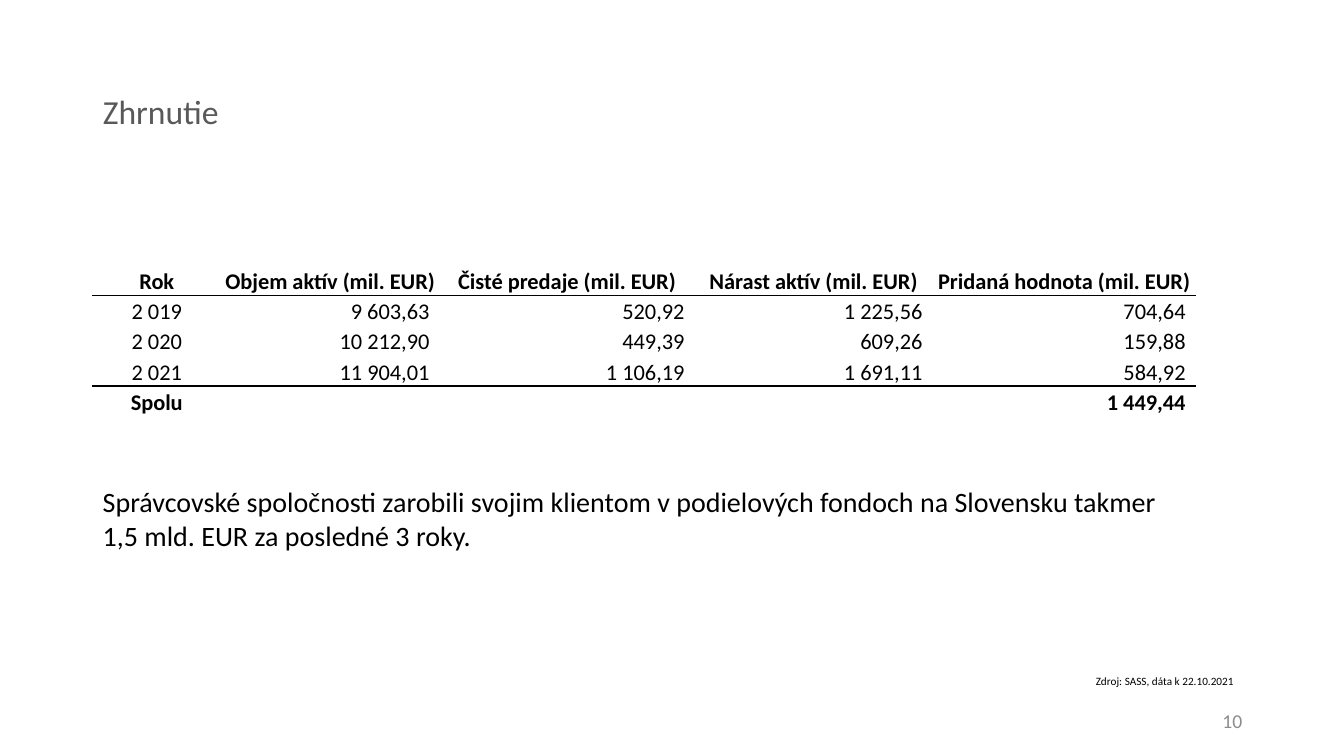
from dataclasses import dataclass

from lxml import etree
from pptx import Presentation
from pptx.dml.color import RGBColor
from pptx.enum.text import MSO_ANCHOR, PP_ALIGN
from pptx.oxml.ns import qn
from pptx.util import Inches, Pt

TOP, MIDDLE, BOTTOM = MSO_ANCHOR.TOP, MSO_ANCHOR.MIDDLE, MSO_ANCHOR.BOTTOM
LEFT, CENTER, RIGHT = PP_ALIGN.LEFT, PP_ALIGN.CENTER, PP_ALIGN.RIGHT
TITLE_ONLY = 5


@dataclass(frozen=True)
class Theme:
    font: str = "Calibri"
    title_color: str = "595959"
    number_color: str = "8C8C8C"
    text_color: str = "000000"
    background: str = "FFFFFF"
    title_size: int = 24
    message_size: int = 20
    table_size: int = 16
    number_size: int = 14
    source_size: int = 8
    rule_width: int = 1


THEME = Theme()

HEADERS = ["Rok", "Objem aktív (mil. EUR)", "Čisté predaje (mil. EUR)",
           "Nárast aktív (mil. EUR)", "Pridaná hodnota (mil. EUR)"]
YEARS = [
    ["2 019", "9 603,63", "520,92", "1 225,56", "704,64"],
    ["2 020", "10 212,90", "449,39", "609,26", "159,88"],
    ["2 021", "11 904,01", "1 106,19", "1 691,11", "584,92"],
]
TOTAL = ["Spolu", "", "", "", "1 449,44"]
COLUMN_WIDTHS = [1.27, 2.17, 2.53, 2.36, 2.61]
HEADER_HEIGHT, ROW_HEIGHT = 0.88, 0.3
NUMBER_INSET = 0.1


def write_text(text_frame, text, *, size, color=THEME.text_color, bold=False,
               align=LEFT, line_spacing=None):
    paragraph = text_frame.paragraphs[0]
    paragraph.alignment = align
    if line_spacing:
        paragraph.line_spacing = line_spacing
    run = paragraph.add_run()
    run.text = text
    run.font.name = THEME.font
    run.font.size = Pt(size)
    run.font.bold = bold
    run.font.color.rgb = RGBColor.from_string(color)


def add_title(slide, box, text):
    title = slide.shapes.title
    title.left, title.top, title.width, title.height = map(Inches, box)
    title.text_frame.vertical_anchor = MIDDLE
    write_text(title.text_frame, text, size=THEME.title_size,
               color=THEME.title_color, line_spacing=0.9)


def add_label(slide, box, text, *, anchor=TOP, **text_format):
    text_frame = slide.shapes.add_textbox(*map(Inches, box)).text_frame
    text_frame.word_wrap = True
    text_frame.vertical_anchor = anchor
    write_text(text_frame, text, **text_format)


def add_rule(cell, side):
    """Draw a cell border; side is lnT or lnB."""
    line = etree.SubElement(cell._tc.get_or_add_tcPr(), qn(f"a:{side}"),
                            w=str(Pt(THEME.rule_width)))
    fill = etree.SubElement(line, qn("a:solidFill"))
    etree.SubElement(fill, qn("a:srgbClr"), val=THEME.text_color)


def add_results_table(slide, left, top):
    rows = [HEADERS, *YEARS, TOTAL]
    last = len(rows) - 1
    height = HEADER_HEIGHT + last * ROW_HEIGHT
    table = slide.shapes.add_table(
        len(rows), len(HEADERS), Inches(left), Inches(top),
        Inches(sum(COLUMN_WIDTHS)), Inches(height)).table
    table.first_row = table.horz_banding = False
    for column, width in zip(table.columns, COLUMN_WIDTHS):
        column.width = Inches(width)

    for row_index, values in enumerate(rows):
        is_header, is_total = row_index == 0, row_index == last
        table.rows[row_index].height = Inches(ROW_HEIGHT)
        for column_index, value in enumerate(values):
            cell = table.cell(row_index, column_index)
            is_number = column_index > 0 and not is_header
            cell.margin_left = cell.margin_top = cell.margin_bottom = 0
            cell.margin_right = Inches(NUMBER_INSET if is_number else 0)
            cell.vertical_anchor = BOTTOM
            # Rules below the header and above the total
            if row_index in (1, last):
                add_rule(cell, "lnT")
            if row_index in (0, last - 1):
                add_rule(cell, "lnB")
            cell.fill.solid()
            cell.fill.fore_color.rgb = RGBColor.from_string(THEME.background)
            if value:
                write_text(cell.text_frame, value, size=THEME.table_size,
                           bold=is_header or is_total,
                           align=RIGHT if is_number else CENTER)
    table.rows[0].height = Inches(HEADER_HEIGHT)


def build_summary_slide(presentation):
    slide = presentation.slides.add_slide(
        presentation.slide_layouts[TITLE_ONLY])
    left = 0.92
    add_title(slide, (left, 0.4, 11.94, 1.45), "Zhrnutie")
    add_results_table(slide, left, 2.05)
    # Key message
    add_label(slide, (left, 4.76, 11.06, 0.77),
              "Správcovské spoločnosti zarobili svojim klientom v podielových "
              "fondoch na Slovensku takmer 1,5 mld. EUR za posledné 3 roky.",
              size=THEME.message_size)
    # Source and slide number
    add_label(slide, (10.77, 6.64, 1.65, 0.24),
              "Zdroj: SASS, dáta k 22.10.2021", size=THEME.source_size)
    add_label(slide, (9.42, 6.95, 3, 0.4), "10", anchor=MIDDLE, align=RIGHT,
              size=THEME.number_size, color=THEME.number_color)


def main():
    presentation = Presentation()
    presentation.slide_width = Inches(13.33)
    presentation.slide_height = Inches(7.5)
    build_summary_slide(presentation)
    presentation.save("out.pptx")


if __name__ == "__main__":
    main()
